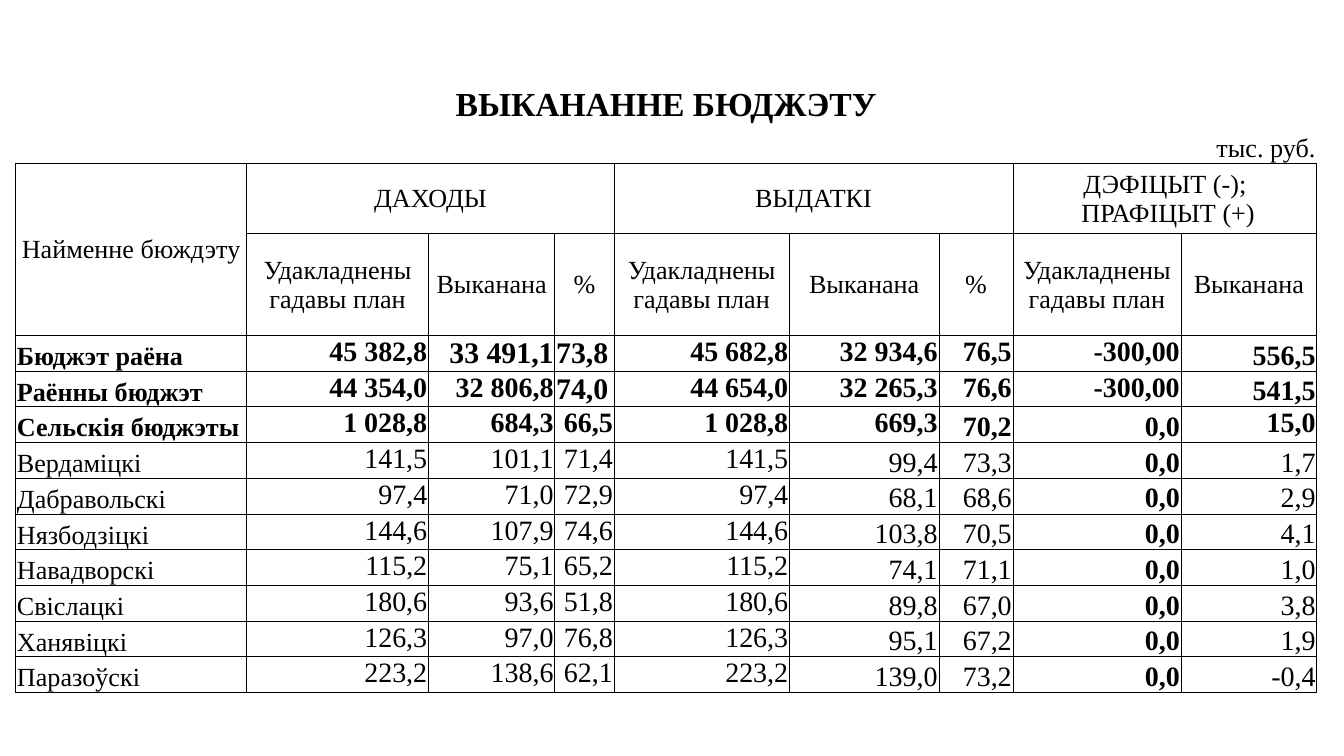
from typing import NamedTuple

from lxml import etree
from pptx import Presentation
from pptx import util as u
from pptx.dml.color import RGBColor
from pptx.enum import text
from pptx.oxml import ns

BLACK = RGBColor(0, 0, 0)
FONT = "Times New Roman"
CENTER, LEFT, RIGHT = text.PP_ALIGN.CENTER, text.PP_ALIGN.LEFT, text.PP_ALIGN.RIGHT
TOP, MIDDLE, BOTTOM = (
    text.MSO_ANCHOR.TOP, text.MSO_ANCHOR.MIDDLE, text.MSO_ANCHOR.BOTTOM)

COLUMN_WIDTHS = [123.8, 72, 25.4, 38.9, 28.8, 31.7, 94, 64.2, 15.9, 39.7, 90, 8.6, 64.2]
BUDGET_ROW_HEIGHT = 19.15
HEADER_HEIGHTS = [24.5, 19.15, 37.5, 54.7]
FIRST_BUDGET_ROW = len(HEADER_HEIGHTS)
VALUE_COLUMNS = [0, 1, 3, 5, 6, 7, 9, 10, 11]
PAIRED_COLUMNS = [1, 3, 7, 11]
UNIT_ROW_PAIRS = [2, 4, 8, 10]
PERCENT_COLUMN, DEFICIT_COLUMN = 5, 10


class Style(NamedTuple):
    size: float = 14
    bold: bool = False
    align: text.PP_ALIGN = CENTER
    anchor: text.MSO_ANCHOR = MIDDLE


class Header(NamedTuple):
    row: int
    column: int
    label: str
    rows: int = 1
    columns: int = 1
    style: Style = Style()


class Budget(NamedTuple):
    values: list[str]
    bottom_columns: set[int]
    bold: bool = False
    large_columns: frozenset[int] = frozenset()
    percent_align: text.PP_ALIGN = RIGHT


def village(*values: str) -> Budget:
    name, plan, income, income_percent, spent, spent_percent, balance = values
    return Budget([name, plan, income, income_percent, plan, spent,
                   spent_percent, "0,0", balance], {0, 7, 9, 10, 11})


PLAN, DONE = "Удакладнены гадавы план", "Выканана"
HEADERS = [
    Header(0, 0, "ВЫКАНАННЕ БЮДЖЭТУ", columns=13, style=Style(18, True)),
    Header(1, 12, "тыс. руб.", style=Style(align=RIGHT, anchor=BOTTOM)),
    Header(2, 0, "Найменне бюждэту", rows=2),
    Header(2, 1, "ДАХОДЫ", columns=5),
    Header(2, 6, "ВЫДАТКІ", columns=4),
    Header(2, 10, "ДЭФІЦЫТ (-);\n ПРАФІЦЫТ (+)", columns=3),
] + [
    Header(3, column, label, columns=2 if column in PAIRED_COLUMNS else 1)
    for column, label in zip(
        VALUE_COLUMNS[1:], [PLAN, DONE, "%", PLAN, DONE, "%", PLAN, DONE])
]
BUDGETS = [
    Budget(["Бюджэт раёна", "45 382,8", "33 491,1", "73,8", "45 682,8", "32 934,6",
            "76,5", "-300,00", "556,5"], {0, 11}, True, frozenset({3, 5}), LEFT),
    Budget(["Раённы бюджэт", "44 354,0", "32 806,8", "74,0", "44 654,0", "32 265,3",
            "76,6", "-300,00", "541,5"], {0, 11}, True, frozenset({5}), LEFT),
    Budget(["Сельскія бюджэты", "1 028,8", "684,3", "66,5", "1 028,8", "669,3",
            "70,2", "0,0", "15,0"], {0, 9, 10}, True),
    village("Вердаміцкі", "141,5", "101,1", "71,4", "99,4", "73,3", "1,7"),
    village("Дабравольскі", "97,4", "71,0", "72,9", "68,1", "68,6", "2,9"),
    village("Нязбодзіцкі", "144,6", "107,9", "74,6", "103,8", "70,5", "4,1"),
    village("Навадворскі", "115,2", "75,1", "65,2", "74,1", "71,1", "1,0"),
    village("Свіслацкі", "180,6", "93,6", "51,8", "89,8", "67,0", "3,8"),
    village("Ханявіцкі", "126,3", "97,0", "76,8", "95,1", "67,2", "1,9"),
    village("Паразоўскі", "223,2", "138,6", "62,1", "139,0", "73,2", "-0,4"),
]


def set_borders(cell, visible_sides: str) -> None:
    properties = cell._tc.get_or_add_tcPr()
    for side in "LRTB":
        line = etree.SubElement(
            properties, ns.qn(f"a:ln{side}"), w=str(int(u.Pt(0.5))))
        if side in visible_sides:
            fill = etree.SubElement(line, ns.qn("a:solidFill"))
            etree.SubElement(fill, ns.qn("a:srgbClr"), val=str(BLACK))
        else:
            etree.SubElement(line, ns.qn("a:noFill"))


def write_cell(cell, content: str, style: Style) -> None:
    cell.text = content
    cell.vertical_anchor = style.anchor
    for paragraph in cell.text_frame.paragraphs:
        paragraph.alignment = style.align
        paragraph.font.name = FONT
        paragraph.font.size = u.Pt(style.size)
        paragraph.font.bold = style.bold
        paragraph.font.color.rgb = BLACK


def merge_cells(table, row: int, column: int, rows: int, columns: int) -> None:
    if rows > 1 or columns > 1:
        table.cell(row, column).merge(
            table.cell(row + rows - 1, column + columns - 1))


def add_grid(slide):
    heights = HEADER_HEIGHTS + [BUDGET_ROW_HEIGHT] * len(BUDGETS)
    table = slide.shapes.add_table(
        len(heights), len(COLUMN_WIDTHS), u.Pt(8.4), u.Pt(43.9),
        u.Pt(sum(COLUMN_WIDTHS)), u.Pt(sum(heights))).table
    table.first_row = table.horz_banding = False
    for column, width in zip(table.columns, COLUMN_WIDTHS):
        column.width = u.Pt(width)
    for index, (row, height) in enumerate(zip(table.rows, heights)):
        row.height = u.Pt(height)
        for cell in row.cells:
            set_borders(cell, ["", "B"][index] if index < 2 else "LRTB")
            cell.fill.background()
            cell.margin_left = cell.margin_top = cell.margin_right = u.Pt(0.7)
            cell.margin_bottom = 0
            write_cell(cell, "", Style())
    return table


def draw_header(table, header: Header) -> None:
    merge_cells(table, header.row, header.column, header.rows, header.columns)
    write_cell(table.cell(header.row, header.column), header.label, header.style)


def draw_budget(table, row: int, budget: Budget) -> None:
    for column, value in zip(VALUE_COLUMNS, budget.values):
        if column in PAIRED_COLUMNS:
            merge_cells(table, row, column, 1, 2)
        size = 14 if column == 0 else 16 if column in budget.large_columns else 15
        align = {0: LEFT, PERCENT_COLUMN: budget.percent_align}.get(column, RIGHT)
        anchor = BOTTOM if column in budget.bottom_columns else TOP
        bold = budget.bold or column == DEFICIT_COLUMN
        write_cell(table.cell(row, column), value, Style(size, bold, align, anchor))


def main() -> None:
    presentation = Presentation()
    presentation.slide_width, presentation.slide_height = u.Pt(720), u.Pt(405)
    slide = presentation.slides.add_slide(presentation.slide_layouts[6])
    table = add_grid(slide)
    for column in UNIT_ROW_PAIRS:
        merge_cells(table, 1, column, 1, 2)
    for header in HEADERS:
        draw_header(table, header)
    for row, budget in enumerate(BUDGETS, FIRST_BUDGET_ROW):
        draw_budget(table, row, budget)
    presentation.save("out.pptx")


if __name__ == "__main__":
    main()
